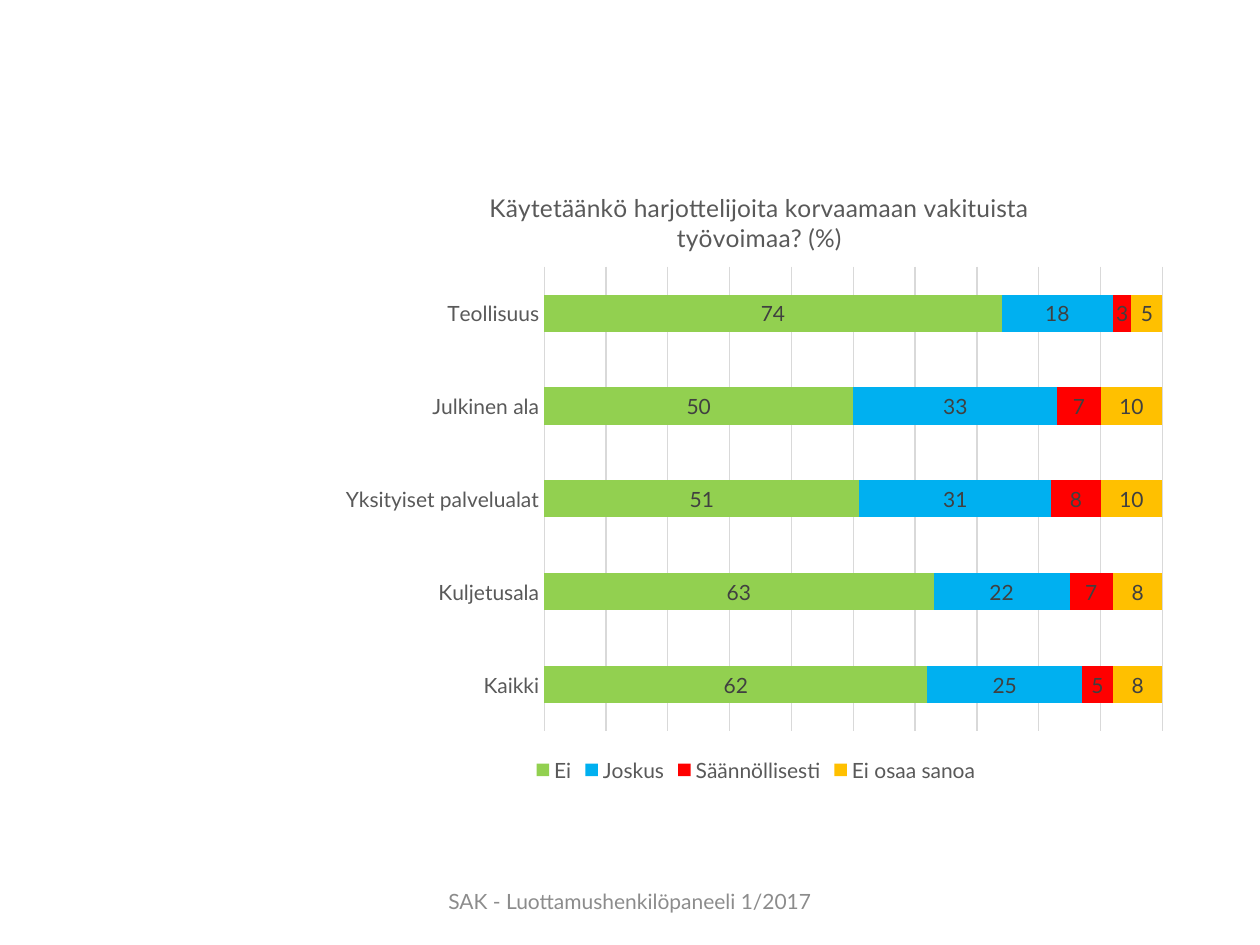
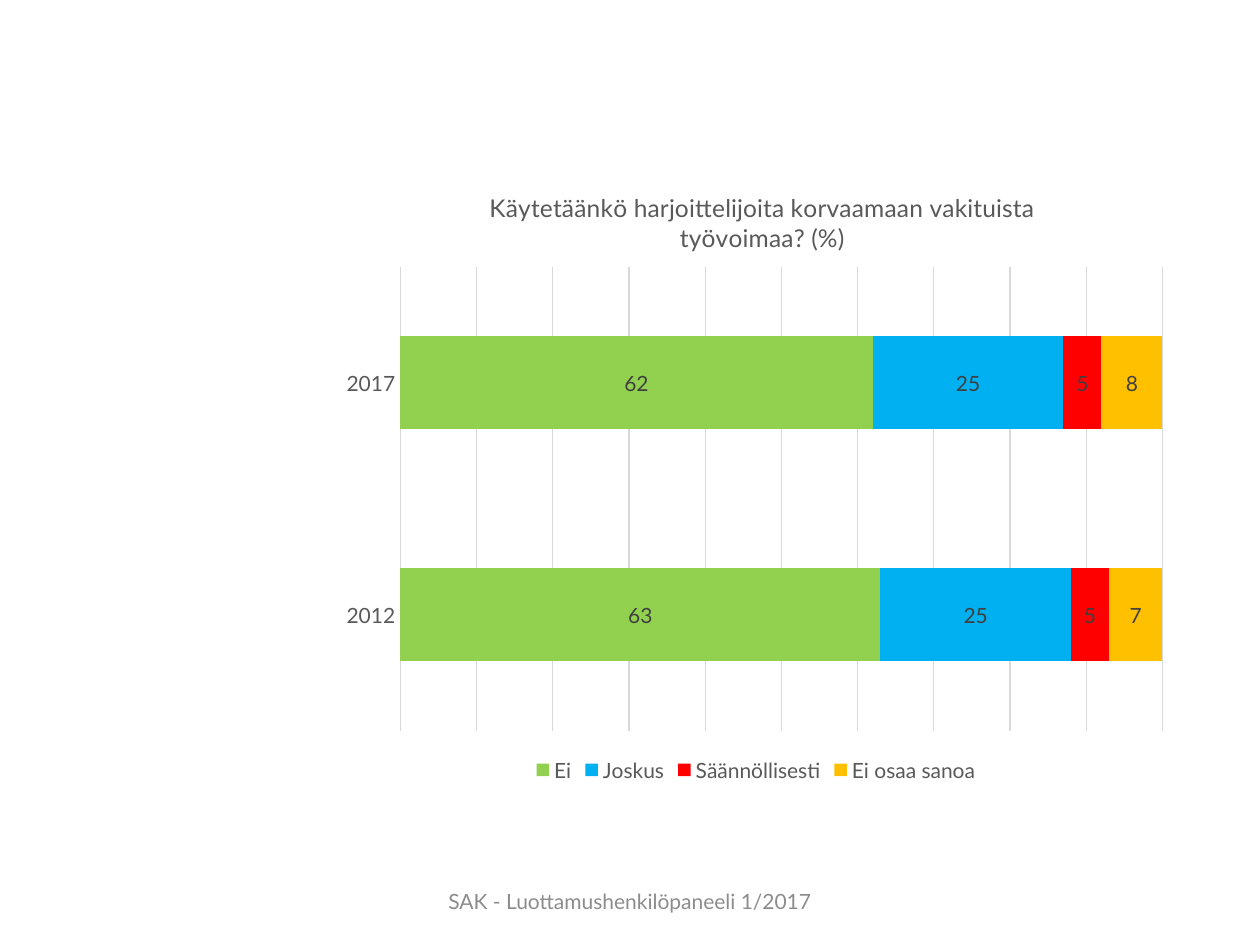
from lxml import etree
from pptx import Presentation
from pptx.chart.data import CategoryChartData
from pptx.dml.color import RGBColor
from pptx.enum.chart import XL_CHART_TYPE, XL_LABEL_POSITION, XL_LEGEND_POSITION, XL_TICK_MARK
from pptx.enum.text import MSO_ANCHOR, PP_ALIGN
from pptx.oxml.ns import qn
from pptx.util import Pt

STACK = XL_CHART_TYPE.BAR_STACKED_100
MID = XL_LABEL_POSITION.CENTER
BOTTOM = XL_LEGEND_POSITION.BOTTOM
NO_TICK = XL_TICK_MARK.NONE
CENTER = PP_ALIGN.CENTER
MIDDLE = MSO_ANCHOR.MIDDLE

FACE = "Lato"
GRAY = "595959"
DARK = "404040"
PALE = "8C8C8C"
GRID = "D9D9D9"
FOOTER = "SAK - Luottamushenkilöpaneeli 1/2017"
ANSWERS = {
    "Ei": "92D050",
    "Joskus": "00B0F0",
    "Säännöllisesti": "FF0000",
    "Ei osaa sanoa": "FFC000",
}
SECTORS = {
    "Teollisuus": (74, 18, 3, 5),
    "Julkinen ala": (50, 33, 7, 10),
    "Yksityiset palvelualat": (51, 31, 8, 10),
    "Kuljetusala": (63, 22, 7, 8),
    "Kaikki": (62, 25, 5, 8),
}
YEARS = {"2012": (63, 25, 5, 7), "2017": (62, 25, 5, 8)}


def color(code):
    return RGBColor.from_string(code)


def style(font, size, code):
    for key, value in {"name": FACE, "size": Pt(size), "bold": False}.items():
        setattr(font, key, value)
    font.color.rgb = color(code)


def rule(line):
    line.color.rgb = color(GRID)
    line.width = Pt(0.75)


def place(part, index, marks):
    layout = part.find(qn("c:layout"))
    if layout is None:
        layout = etree.Element(qn("c:layout"))
        part.insert(index, layout)
    for node in list(layout):
        layout.remove(node)
    manual = etree.SubElement(layout, qn("c:manualLayout"))
    for tag, value in marks.items():
        etree.SubElement(manual, qn(f"c:{tag}")).set("val", str(value))


def add_title(chart, text):
    frame = chart.chart_title.text_frame
    frame.text = text
    style(frame.paragraphs[0].runs[0].font, 14, GRAY)
    marks = {"xMode": "edge", "yMode": "edge", "x": 0.18, "y": 0.04}
    place(chart._chartSpace.chart.find(qn("c:title")), 1, marks)


def add_bars(slide, title, rows, left, flip=False):
    data = CategoryChartData()
    data.categories = list(rows)
    for name, values in zip(ANSWERS, zip(*rows.values())):
        data.add_series(name, values)
    frame = slide.shapes.add_chart(STACK, Pt(190), Pt(91.5), Pt(484), Pt(358.5), data)
    chart = frame.chart
    style(chart.font, 10, "000000")
    add_title(chart, title)

    chart.has_legend = True
    chart.legend.position = BOTTOM
    chart.legend.include_in_layout = False
    style(chart.legend.font, 12, GRAY)

    cat = chart.category_axis
    cat.reverse_order = flip
    cat.major_tick_mark = NO_TICK
    cat.minor_tick_mark = NO_TICK
    cat.has_major_gridlines = False
    style(cat.tick_labels.font, 12, GRAY)
    rule(cat.format.line)

    val = chart.value_axis
    val.visible = False
    val.major_unit = 0.1
    val.has_major_gridlines = True
    rule(val.major_gridlines.format.line)

    plot = chart.plots[0]
    plot.gap_width = 150
    plot.overlap = 100
    plot.vary_by_categories = False
    for series, code in zip(plot.series, ANSWERS.values()):
        series.format.fill.solid()
        series.format.fill.fore_color.rgb = color(code)
        labels = series.data_labels
        labels.show_value = True
        labels.position = MID
        style(labels.font, 12, DARK)

    marks = {
        "layoutTarget": "inner", "xMode": "edge", "yMode": "edge",
        "x": left, "y": 0.17, "w": round(0.98 - left, 2), "h": 0.74,
    }
    place(chart._chartSpace.chart.plotArea, 0, marks)


def add_footer(slide):
    frame = slide.shapes.add_textbox(Pt(246), Pt(500.5), Pt(228), Pt(28.8)).text_frame
    frame.word_wrap = True
    frame.vertical_anchor = MIDDLE
    line = frame.paragraphs[0]
    line.text = FOOTER
    line.alignment = CENTER
    style(line.runs[0].font, 12, PALE)


def add_page(deck, *args):
    slide = deck.slides.add_slide(deck.slide_layouts[6])
    add_footer(slide)
    add_bars(slide, *args)


def main():
    deck = Presentation()
    deck.slide_width, deck.slide_height = Pt(720), Pt(540)
    add_page(deck, "Käytetäänkö harjottelijoita korvaamaan vakituista työvoimaa? (%)",
             SECTORS, 0.25, True)
    add_page(deck, "Käytetäänkö harjoittelijoita korvaamaan vakituista työvoimaa? (%)",
             YEARS, 0.08)
    deck.save("out.pptx")


if __name__ == "__main__":
    main()
